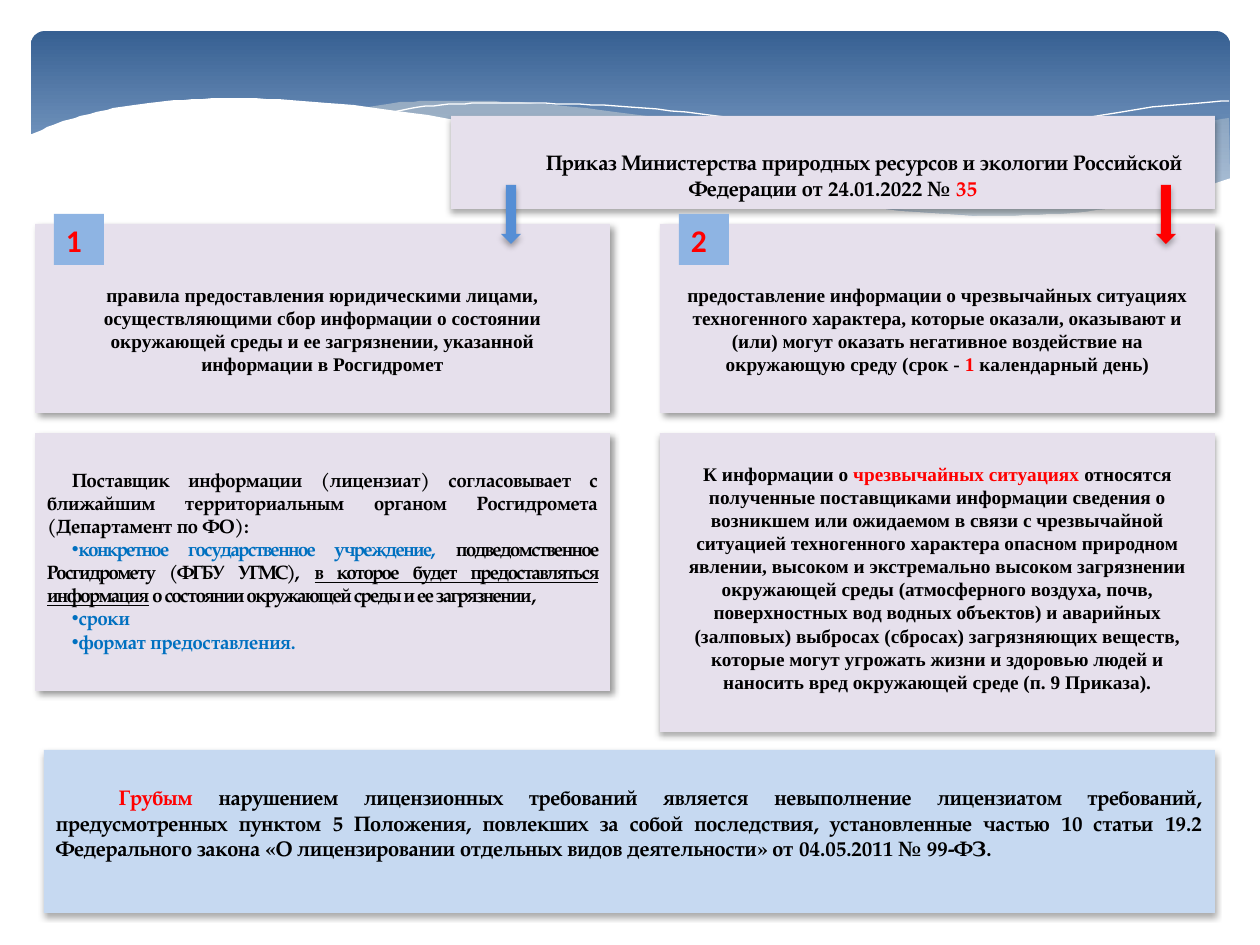
from dataclasses import dataclass

from lxml.etree import SubElement
from pptx import Presentation
from pptx.dml.color import RGBColor
from pptx.enum.shapes import MSO_SHAPE
from pptx.enum.text import MSO_ANCHOR, MSO_AUTO_SIZE, PP_ALIGN
from pptx.oxml.ns import qn
from pptx.util import Pt

PX = 914400 / 126
BLACK = RGBColor(0x00, 0x00, 0x00)
WHITE = RGBColor(0xFF, 0xFF, 0xFF)
RED = RGBColor(0xFF, 0x00, 0x00)
BLUE = RGBColor(0x00, 0x70, 0xC0)
ARROW_BLUE = RGBColor(0x55, 0x8E, 0xD5)
BADGE_BLUE = RGBColor(0x8E, 0xB4, 0xE3)
PALE_BLUE = RGBColor(0xC6, 0xD9, 0xF1)
LILAC = RGBColor(0xE6, 0xE0, 0xEC)
CREAM = RGBColor(0xEE, 0xEC, 0xE1)
BAND_DARK = RGBColor(0x37, 0x60, 0x92)
BAND_LIGHT = RGBColor(0x95, 0xB3, 0xD7)
PAGELLA, TIMES, CALIBRI = "TeX Gyre Pagella", "Times New Roman", "Calibri"
CORNER_SHADOW = (40, 4, 3, 45)
BOTTOM_SHADOW = (32, 3.5, 2.2, 90)

COVER = [(1231, 178), (1171, 197), (1108, 209), (1037, 215), (961, 215), (867, 207),
         (760, 188), (667, 168), (563, 144), (460, 121), (368, 107), (290, 100),
         (223, 98), (166, 101), (120, 107), (85, 115), (58, 123), (29, 135)]
RIGHT_TOP = [(1229, 118), (1160, 131), (1085, 149), (981, 173), (890, 191), (833, 202)]
RIGHT_BOTTOM = [(833, 202), (906, 210), (969, 215), (1026, 217), (1076, 215),
                (1120, 211), (1160, 205), (1196, 197), (1230, 178)]
MIDDLE_TOP = [(1125, 210), (1055, 200), (976, 188), (890, 169), (793, 146), (682, 122),
              (586, 108), (529, 103), (479, 101), (433, 101), (394, 103), (360, 108)]
MIDDLE_BOTTOM = [(360, 108), (431, 118), (509, 134), (566, 146), (668, 170), (757, 189),
                 (838, 203), (910, 212), (974, 216), (1031, 218), (1080, 217), (1125, 210)]
LEFT_THREAD = [(389, 113), (413, 108), (457, 104), (505, 103), (567, 104), (643, 108),
               (733, 118), (838, 136), (958, 161), (1047, 183), (1143, 209)]
RIGHT_THREAD = [(772, 190), (847, 170), (942, 147), (1016, 131), (1091, 117),
                (1164, 106), (1229, 101)]


@dataclass
class Span:
    """A run of text with its own look."""
    text: str
    color: RGBColor = BLACK
    spacing: float = 0
    underline: bool = False


@dataclass
class Block:
    """A paragraph made of spans."""
    spans: list
    align: PP_ALIGN = PP_ALIGN.CENTER
    indent: int = 0
    bullet: bool = False


def px(value):
    """Turn pixels into EMU."""
    return round(value * PX)


def smooth(knots, steps=6):
    """Return points on a Catmull-Rom curve through the knots."""
    padded = [knots[0], *knots, knots[-1]]
    points = [knots[0]]
    for a, b, c, d in zip(padded, padded[1:], padded[2:], padded[3:]):
        for step in range(1, steps + 1):
            t = step / steps
            points.append(tuple(
                (2 * q + (r - p) * t + (2 * p - 5 * q + 4 * r - s) * t ** 2
                 + (3 * q - p - 3 * r + s) * t ** 3) / 2
                for p, q, r, s in zip(a, b, c, d)))
    return points


def add_outline(slide, points, closed):
    """Add a freeform through the points."""
    builder = slide.shapes.build_freeform(*points[0], scale=PX)
    builder.add_line_segments(points[1:], close=closed)
    shape = builder.convert_to_shape()
    shape.shadow.inherit = False
    return shape


def add_wave(slide, points, color, opacity=100):
    """Add a filled wave, partly transparent if asked."""
    shape = add_outline(slide, points, True)
    paint(shape, color)
    if opacity < 100:
        tone = shape.element.spPr.find(".//" + qn("a:srgbClr"))
        SubElement(tone, qn("a:alpha"), val=str(opacity * 1000))


def add_thread(slide, knots):
    """Add a thin white curve."""
    shape = add_outline(slide, smooth(knots), False)
    shape.fill.background()
    shape.line.color.rgb = WHITE
    shape.line.width = Pt(0)


def add_band(slide):
    """Add the gradient band at the top with its waves."""
    band = add_preset(slide, MSO_SHAPE.ROUNDED_RECTANGLE, (31, 31, 1199, 197), BAND_DARK)
    band.adjustments[0] = 0.07
    band.fill.gradient()
    band.fill.gradient_angle = 270
    for stop, color, position in zip(band.fill.gradient_stops, (BAND_DARK, BAND_LIGHT), (0, 0.9)):
        stop.color.rgb = color
        stop.position = position
    add_wave(slide, smooth(RIGHT_TOP) + smooth(RIGHT_BOTTOM), CREAM, 29)
    add_wave(slide, smooth(MIDDLE_TOP) + smooth(MIDDLE_BOTTOM), CREAM, 40)
    add_thread(slide, LEFT_THREAD)
    add_thread(slide, RIGHT_THREAD)
    add_wave(slide, smooth(COVER) + [(29, 282), (1231, 282)], WHITE)


def paint(shape, color, shadow=None):
    """Give a shape a plain fill, no line and an optional shadow."""
    shape.fill.solid()
    shape.fill.fore_color.rgb = color
    shape.line.fill.background()
    shape.shadow.inherit = False
    if shadow:
        opacity, blur, distance, angle = shadow
        effects = shape.element.spPr.find(qn("a:effectLst"))
        outer = SubElement(effects, qn("a:outerShdw"), blurRad=str(Pt(blur)),
                           dist=str(Pt(distance)), dir=str(angle * 60000), rotWithShape="0")
        tone = SubElement(outer, qn("a:srgbClr"), val=str(BLACK))
        SubElement(tone, qn("a:alpha"), val=str(opacity * 1000))


def add_preset(slide, kind, box, color, shadow=None):
    """Add a filled preset shape."""
    shape = slide.shapes.add_shape(kind, *map(px, box))
    paint(shape, color, shadow)
    return shape


def place(placeholder, box, color, shadow):
    """Move a placeholder to the front and format it as a panel."""
    placeholder.left, placeholder.top, placeholder.width, placeholder.height = map(px, box)
    paint(placeholder, color, shadow)
    placeholder.element.getparent().append(placeholder.element)


def write(shape, blocks, font, size, top=None):
    """Write blocks into a shape, from a top inset or centred vertically."""
    frame = shape.text_frame
    frame.word_wrap = True
    frame.auto_size = MSO_AUTO_SIZE.NONE
    frame.vertical_anchor = MSO_ANCHOR.MIDDLE if top is None else MSO_ANCHOR.TOP
    frame.margin_left = frame.margin_right = px(12)
    frame.margin_top = px(6 if top is None else top)
    frame.margin_bottom = px(6)
    for index, block in enumerate(blocks):
        paragraph = frame.add_paragraph() if index else frame.paragraphs[0]
        paragraph.alignment = block.align
        paragraph.space_before = Pt(0)
        properties = paragraph._p.get_or_add_pPr()
        properties.set("marL", "0")
        properties.set("indent", str(px(block.indent)))
        if block.bullet:
            SubElement(properties, qn("a:buChar"), char="•")
        else:
            SubElement(properties, qn("a:buNone"))
        for span in block.spans:
            run = paragraph.add_run()
            run.text = span.text
            run.font.name, run.font.size, run.font.bold = font, Pt(size), True
            run.font.color.rgb = span.color
            if span.underline:
                run.font.underline = True
            if span.spacing:
                run._r.get_or_add_rPr().set("spc", str(round(span.spacing * 100)))


def add_panel(slide, box, color, shadow, blocks, font, size, top):
    """Add a rectangle with text."""
    shape = add_preset(slide, MSO_SHAPE.RECTANGLE, box, color, shadow)
    write(shape, blocks, font, size, top)


def main():
    """Build the slide and save it."""
    presentation = Presentation()
    presentation.slide_width, presentation.slide_height = px(1260), px(945)
    slide = presentation.slides.add_slide(presentation.slide_layouts[1])
    title, body = slide.placeholders
    add_band(slide)

    add_panel(slide, (35, 224, 575, 189), LILAC, CORNER_SHADOW, [
        Block([Span("правила предоставления юридическими лицами, осуществляющими сбор информации о состоянии окружающей среды и ее загрязнении, указанной")]),
        Block([Span("информации в Росгидромет")])], TIMES, 11, 59)
    add_panel(slide, (44, 750, 1171, 163), PALE_BLUE, BOTTOM_SHADOW, [
        Block([Span("Грубым", RED), Span(" нарушением лицензионных требований является невыполнение лицензиатом требований, предусмотренных пунктом 5 Положения, повлекших за собой последствия, установленные частью 10 статьи 19.2 Федерального закона «О лицензировании отдельных видов деятельности» от 04.05.2011 № 99-ФЗ.")],
              PP_ALIGN.JUSTIFY, 63)], PAGELLA, 12, 35)
    add_panel(slide, (660, 433, 555, 299), LILAC, BOTTOM_SHADOW, [
        Block([Span("К информации о "), Span("чрезвычайных ситуациях ", RED), Span("относятся полученные поставщиками информации сведения о возникшем или ожидаемом в связи с чрезвычайной ситуацией техногенного характера опасном природном явлении, высоком и экстремально высоком загрязнении окружающей среды (атмосферного воздуха, почв, поверхностных вод водных объектов) и аварийных (залповых) выбросах (сбросах) загрязняющих веществ, которые могут угрожать жизни и здоровью людей и наносить вред окружающей среде (п. 9 Приказа).")])],
        TIMES, 11, 29)

    place(body, (35, 433, 575, 258), LILAC, CORNER_SHADOW)
    item = {"align": PP_ALIGN.JUSTIFY, "indent": 25}
    write(body, [
        Block([Span("Поставщик информации (лицензиат) согласовывает с ближайшим территориальным органом Росгидромета (Департамент по ФО):")], **item),
        Block([Span("конкретное государственное учреждение, ", BLUE, -0.7),
               Span("подведомственное Росгидромету (ФГБУ УГМС), ", spacing=-0.7),
               Span("в которое будет предоставляться информация", spacing=-0.7, underline=True),
               Span(" о состоянии окружающей среды и ее загрязнении", spacing=-0.7),
               Span(",")], bullet=True, **item),
        Block([Span("сроки", BLUE)], bullet=True, **item),
        Block([Span("формат предоставления.", BLUE)], bullet=True, **item)], PAGELLA, 11, 35)

    place(title, (451, 116, 764, 93), LILAC, BOTTOM_SHADOW)
    write(title, [Block([
        Span("Приказ Министерства природных ресурсов и экологии Российской Федерации от 24.01.2022 № "),
        Span("35", RED)], indent=63)], PAGELLA, 12, 34)

    add_panel(slide, (660, 224, 555, 189), LILAC, CORNER_SHADOW, [
        Block([Span("предоставление информации о чрезвычайных ситуациях")]),
        Block([Span("техногенного характера, которые оказали, оказывают и (или) могут оказать негативное воздействие на окружающую среду (срок - "),
               Span("1", RED), Span(" календарный день)")])], TIMES, 11, 59)

    for left, color in ((501, ARROW_BLUE), (1156, RED)):
        add_preset(slide, MSO_SHAPE.DOWN_ARROW, (left, 185, 20, 59), color, BOTTOM_SHADOW)
    for left, number in ((54, "1"), (679, "2")):
        badge = add_preset(slide, MSO_SHAPE.RECTANGLE, (left, 214, 50, 51), BADGE_BLUE)
        write(badge, [Block([Span(number, RED)], PP_ALIGN.LEFT)], CALIBRI, 18)
    presentation.save("out.pptx")


if __name__ == "__main__":
    main()
